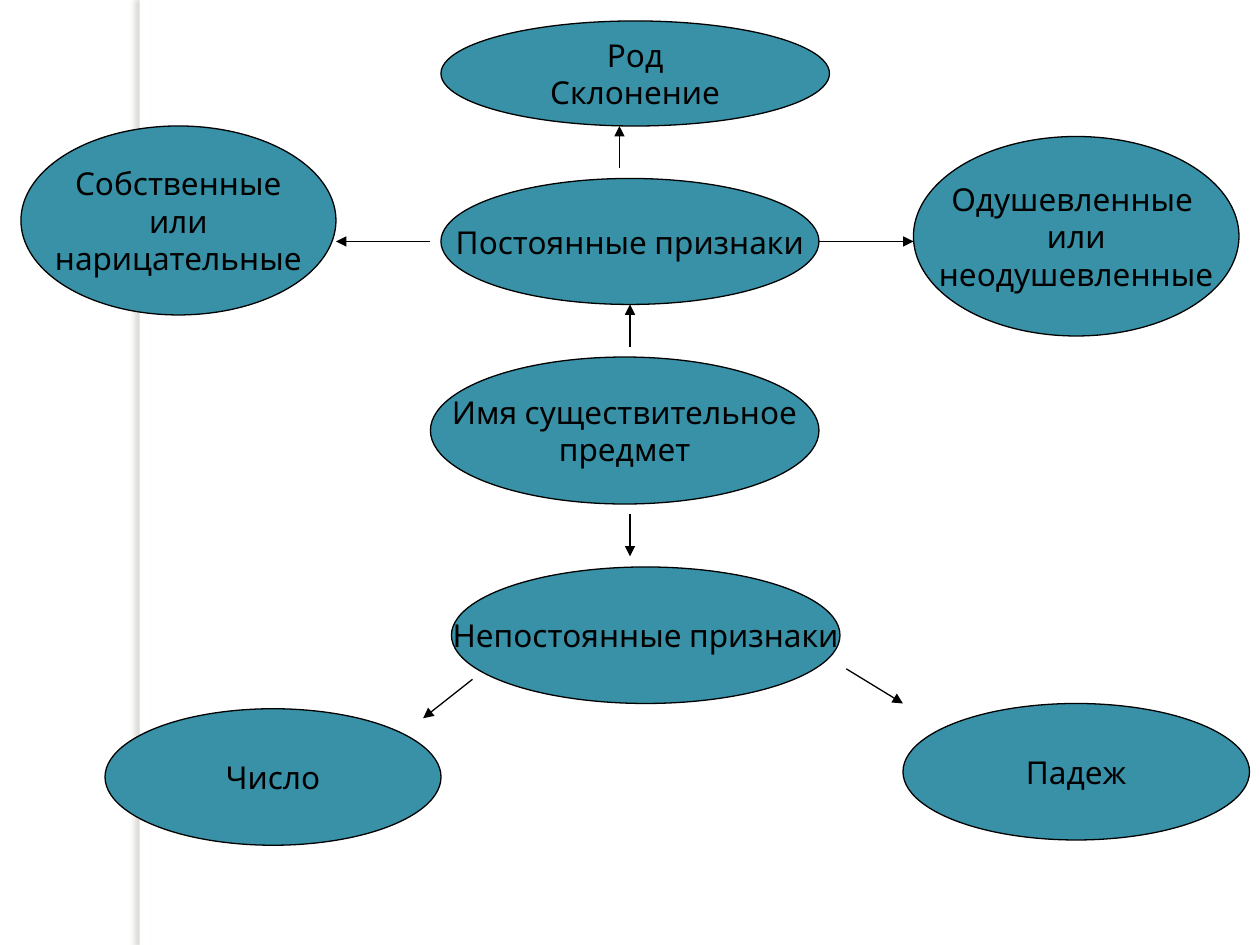
"""Build a slide that maps the constant and changing features of the noun."""
from dataclasses import dataclass

from lxml import etree
from pptx import Presentation
from pptx import util as u
from pptx.dml.color import RGBColor
from pptx.enum import shapes, text
from pptx.oxml.ns import qn


@dataclass(frozen=True)
class Theme:
    """Colours, type and line sizes of the slide."""
    paper: RGBColor = RGBColor(0xFF, 0xFF, 0xFF)
    bubble: RGBColor = RGBColor(0x38, 0x91, 0xA7)
    ink: RGBColor = RGBColor(0, 0, 0)
    shade: str = "736F63"
    font: str = "Karla"
    size: u.Pt = u.Pt(18)
    line: u.Pt = u.Pt(0.75)


THEME = Theme()
COLUMNS, ROWS = 120, 90
WIDTH, HEIGHT = u.Inches(10), u.Inches(7.5)

BUBBLES = [
    ("Имя существительное\nпредмет", 41, 34, 37, 14),
    ("Постоянные признаки", 42, 17, 36, 12),
    ("Одушевленные \nили\nнеодушевленные", 87, 13, 31, 19),
    ("Собственные\nили\nнарицательные", 2, 12, 30, 18),
    ("Род\nСклонение", 42, 2, 37, 10),
    ("Непостоянные признаки", 43, 54, 37, 13),
    ("Число", 10, 67.5, 32, 13),
    ("Падеж", 86, 67, 33, 13),
]

ARROWS = [
    (60, 33, 60, 29),
    (41, 23, 32, 23),
    (59, 16, 59, 12),
    (78, 23, 87, 23),
    (60, 49, 60, 53),
    (45, 64.7, 40.3, 68.4),
    (80.6, 63.7, 86, 67),
]


def grid(column, row, *rest):
    """Turn alternating columns and rows into lengths."""
    steps = (WIDTH / COLUMNS, HEIGHT / ROWS)
    return [u.Emu(round(value * steps[index % 2]))
            for index, value in enumerate((column, row, *rest))]


def add_band(slide):
    """Add the full-height strip that casts a soft shadow to the left."""
    band = slide.shapes.add_shape(shapes.MSO_SHAPE.RECTANGLE, *grid(13.3, 0, 1, ROWS))
    band.fill.solid()
    band.fill.fore_color.rgb = THEME.paper
    band.line.fill.background()
    band.shadow.inherit = False
    effects = band._element.spPr.find(qn("a:effectLst"))
    shadow = etree.SubElement(effects, qn("a:outerShdw"), blurRad=str(u.Pt(3)),
                              dist=str(u.Pt(3)), dir="10800000", rotWithShape="0")
    colour = etree.SubElement(shadow, qn("a:srgbClr"), val=THEME.shade)
    etree.SubElement(colour, qn("a:alpha"), val="25000")


def add_bubble(slide, label, *box):
    """Add an outlined ellipse with centred, unwrapped text."""
    bubble = slide.shapes.add_shape(shapes.MSO_SHAPE.OVAL, *grid(*box))
    bubble.shadow.inherit = False
    bubble.fill.solid()
    bubble.fill.fore_color.rgb = THEME.bubble
    bubble.line.color.rgb = THEME.ink
    bubble.line.width = THEME.line
    frame = bubble.text_frame
    frame.text = label
    frame.word_wrap = False
    frame.vertical_anchor = text.MSO_ANCHOR.MIDDLE
    for paragraph in frame.paragraphs:
        paragraph.alignment = text.PP_ALIGN.CENTER
        for run in paragraph.runs:
            run.font.name = THEME.font
            run.font.size = THEME.size
            run.font.color.rgb = THEME.ink


def add_arrow(slide, *ends):
    """Add a straight arrow pointing at its second end."""
    arrow = slide.shapes.add_connector(shapes.MSO_CONNECTOR.STRAIGHT, *grid(*ends))
    arrow.line.color.rgb = THEME.ink
    arrow.line.width = THEME.line
    properties = arrow._element.spPr
    etree.SubElement(properties.find(qn("a:ln")), qn("a:tailEnd"), type="triangle")
    etree.SubElement(properties, qn("a:effectLst"))


def main():
    """Build and save the presentation."""
    presentation = Presentation()
    presentation.slide_width, presentation.slide_height = WIDTH, HEIGHT
    slide = presentation.slides.add_slide(presentation.slide_layouts[6])
    slide.background.fill.solid()
    slide.background.fill.fore_color.rgb = THEME.paper
    add_band(slide)
    for bubble in BUBBLES:
        add_bubble(slide, *bubble)
    for arrow in ARROWS:
        add_arrow(slide, *arrow)
    presentation.save("out.pptx")


if __name__ == "__main__":
    main()
